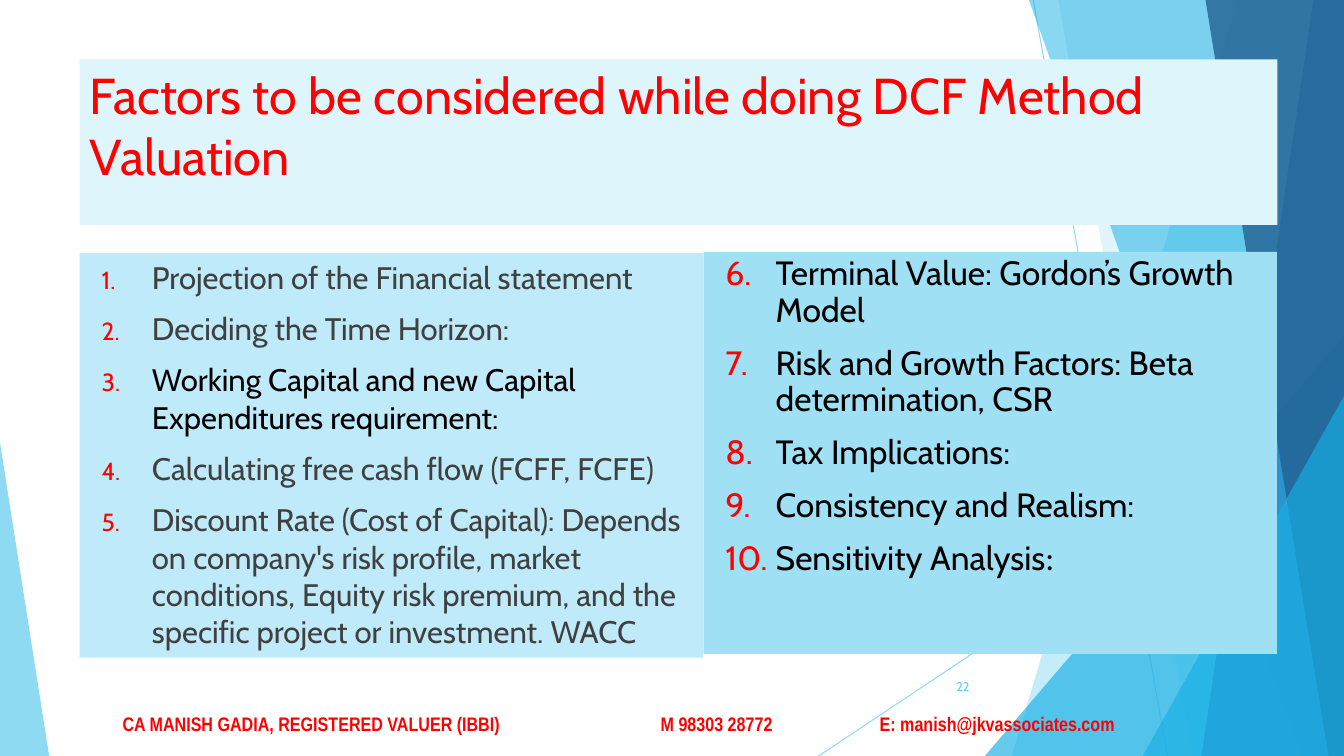
from dataclasses import dataclass

from lxml import etree
from pptx import Presentation
from pptx.dml.color import RGBColor
from pptx.enum.shapes import MSO_CONNECTOR, MSO_SHAPE
from pptx.enum.text import MSO_ANCHOR, PP_ALIGN
from pptx.oxml.ns import qn
from pptx.util import Cm, Pt

STRAIGHT = MSO_CONNECTOR.STRAIGHT
RECTANGLE = MSO_SHAPE.RECTANGLE
TRIANGLE = MSO_SHAPE.ISOSCELES_TRIANGLE
TOP, MIDDLE = MSO_ANCHOR.TOP, MSO_ANCHOR.MIDDLE
LEFT = PP_ALIGN.LEFT
WIDTH, HEIGHT = 33.87, 19.05


@dataclass(frozen=True)
class Theme:
    red: str = "FF0000"
    grey: str = "404040"
    black: str = "000000"
    sky: str = "5FCBEF"
    azure: str = "17B0E4"
    blue: str = "2E83C3"
    navy: str = "226292"
    title_panel: str = "DFF5FC"
    left_panel: str = "BFEAF9"
    right_panel: str = "9FE0F5"
    font: str = "Cabin"
    colon_font: str = "Calibri"
    footer_font: str = "Arial Narrow"
    title_size: float = 36
    left_size: float = 22.2
    right_size: float = 24
    footer_size: float = 14
    number_size: float = 9


THEME = Theme()

LEFT_FACTORS = [
    [("Projection of the Financial statement", THEME.grey, THEME.font)],
    [("Deciding the Time Horizon:", THEME.grey, THEME.font)],
    [("Working Capital and new Capital Expenditures requirement:", THEME.black, THEME.font)],
    [("Calculating free cash flow (FCFF, FCFE)", THEME.grey, THEME.font)],
    [("Discount Rate (Cost of Capital): Depends on company's risk profile, market conditions, "
      "Equity risk premium, and the specific project or investment. WACC", THEME.grey, THEME.font)],
]
RIGHT_FACTORS = [
    [("Terminal Value: Gordon’s Growth Model", THEME.black, THEME.font)],
    [("Risk and Growth Factors: Beta determination, CSR", THEME.black, THEME.font)],
    [("Tax Implications:", THEME.black, THEME.font)],
    [("Consistency and Realism:", THEME.black, THEME.font)],
    [("Sensitivity Analysis", THEME.black, THEME.font), (":", THEME.black, THEME.colon_font)],
]


def set_alpha(fill_owner, percent):
    for color in fill_owner.iter(qn("a:srgbClr")):
        etree.SubElement(color, qn("a:alpha"), val=str(percent * 1000))


def paint(shape, color, alpha=100):
    shape.shadow.inherit = False
    shape.fill.solid()
    shape.fill.fore_color.rgb = RGBColor.from_string(color)
    shape.line.fill.background()
    if alpha < 100:
        set_alpha(shape._element.spPr, alpha)


def prepare_frame(shape, anchor=TOP):
    frame = shape.text_frame
    for name, value in {"word_wrap": True, "vertical_anchor": anchor}.items():
        setattr(frame, name, value)
    return frame


def add_run(paragraph, text, size, color, font=THEME.font, bold=False):
    run = paragraph.add_run()
    run.text = text
    for name, value in {"size": Pt(size), "name": font, "bold": bold}.items():
        setattr(run.font, name, value)
    run.font.color.rgb = RGBColor.from_string(color)


def add_panel(slide, box, color):
    panel = slide.shapes.add_shape(RECTANGLE, *map(Cm, box))
    paint(panel, color)
    return prepare_frame(panel)


def add_ray(slide, start, end):
    ray = slide.shapes.add_connector(STRAIGHT, *map(Cm, start + end))
    ray.line.width = Pt(0.75)
    ray.line.color.rgb = RGBColor.from_string(THEME.sky)
    properties = ray._element.spPr
    set_alpha(properties, 70)
    etree.SubElement(properties, qn("a:effectLst"))


def add_ribbon(slide, top_x, bottom_x, color, alpha):
    outline = slide.shapes.build_freeform(Cm(top_x), 0)
    corners = [(WIDTH, 0), (WIDTH, HEIGHT), (bottom_x, HEIGHT)]
    outline.add_line_segments([(Cm(x), Cm(y)) for x, y in corners], close=True)
    paint(outline.convert_to_shape(), color, alpha)


def add_wedge(slide, left, top, right, apex, color, alpha):
    box = (left, top, right - left, HEIGHT - top)
    wedge = slide.shapes.add_shape(TRIANGLE, *map(Cm, box))
    wedge.adjustments[0] = apex
    paint(wedge, color, alpha)


def add_backdrop(slide):
    add_ray(slide, (26.04, 0), (29.42, HEIGHT))
    add_ray(slide, (WIDTH, 10.23), (20.63, HEIGHT))
    add_ribbon(slide, 31.19, 25.5, THEME.sky, 36)
    add_ribbon(slide, 26.67, 30.05, THEME.sky, 20)
    add_wedge(slide, 24.82, 8.46, WIDTH, 1, THEME.azure, 66)
    add_ribbon(slide, 25.93, 32.79, THEME.azure, 50)
    add_ribbon(slide, 33.1, 30.28, THEME.blue, 70)
    add_ribbon(slide, 30.38, 33.48, THEME.navy, 80)
    add_wedge(slide, 28.8, 9.98, WIDTH, 1, THEME.azure, 66)
    add_wedge(slide, 0, 11.15, 1.24, 0, THEME.sky, 70)


def add_title(slide, box):
    heading = add_panel(slide, box, THEME.title_panel).paragraphs[0]
    heading.alignment = LEFT
    add_run(heading, "Factors to be considered while doing DCF Method Valuation",
            THEME.title_size, THEME.red)


def number_paragraph(paragraph, start, bullet_percent):
    properties = paragraph._p.get_or_add_pPr()
    properties.set("marL", str(Cm(1.57)))
    properties.set("indent", str(-Cm(1.27)))
    bullet_color = etree.SubElement(properties, qn("a:buClr"))
    etree.SubElement(bullet_color, qn("a:srgbClr"), val=THEME.red)
    etree.SubElement(properties, qn("a:buSzPct"), val=str(bullet_percent * 1000))
    etree.SubElement(properties, qn("a:buAutoNum"), type="arabicPeriod", startAt=str(start))


def add_factors(slide, box, color, factors, size, start, bullet_percent, gap, spacing):
    frame = add_panel(slide, box, color)
    for index, runs in enumerate(factors):
        factor = frame.add_paragraph() if index else frame.paragraphs[0]
        number_paragraph(factor, start, bullet_percent)
        layout = {"alignment": LEFT, "line_spacing": spacing,
                  "space_before": Pt(gap if index else 0)}
        for name, value in layout.items():
            setattr(factor, name, value)
        for text, ink, font in runs:
            add_run(factor, text, size, ink, font)


def add_slide_number(slide, box):
    frame = prepare_frame(slide.shapes.add_textbox(*map(Cm, box)), MIDDLE)
    add_run(frame.paragraphs[0], "22", THEME.number_size, THEME.sky)


def add_footer(slide, box):
    frame = prepare_frame(slide.shapes.add_textbox(*map(Cm, box)), MIDDLE)
    contact = frame.paragraphs[0]
    tabs = etree.SubElement(contact._p.get_or_add_pPr(), qn("a:tabLst"))
    for position in (13.56, 19.08):
        etree.SubElement(tabs, qn("a:tab"), pos=str(Cm(position)), algn="l")
    details = ["CA MANISH GADIA, REGISTERED VALUER (IBBI)", "M 98303 28772",
               "E: manish@jkvassociates.com"]
    add_run(contact, "\t".join(details), THEME.footer_size, THEME.red,
            THEME.footer_font, True)


def main():
    deck = Presentation()
    deck.slide_width, deck.slide_height = Cm(WIDTH), Cm(HEIGHT)
    slide = deck.slides.add_slide(deck.slide_layouts[6])
    add_backdrop(slide)
    add_title(slide, (2.01, 1.5, 30.18, 4.17))
    add_factors(slide, (2.01, 6.38, 15.72, 10.19), THEME.left_panel, LEFT_FACTORS,
                THEME.left_size, start=1, bullet_percent=80, gap=10, spacing=1.0)
    add_slide_number(slide, (23.85, 16.79, 1.91, 1.02))
    add_factors(slide, (17.73, 6.35, 14.45, 10.13), THEME.right_panel, RIGHT_FACTORS,
                THEME.right_size, start=6, bullet_percent=100, gap=12, spacing=0.9)
    add_footer(slide, (2.84, 17.75, 26.8, 0.97))
    deck.save("out.pptx")


if __name__ == "__main__":
    main()
